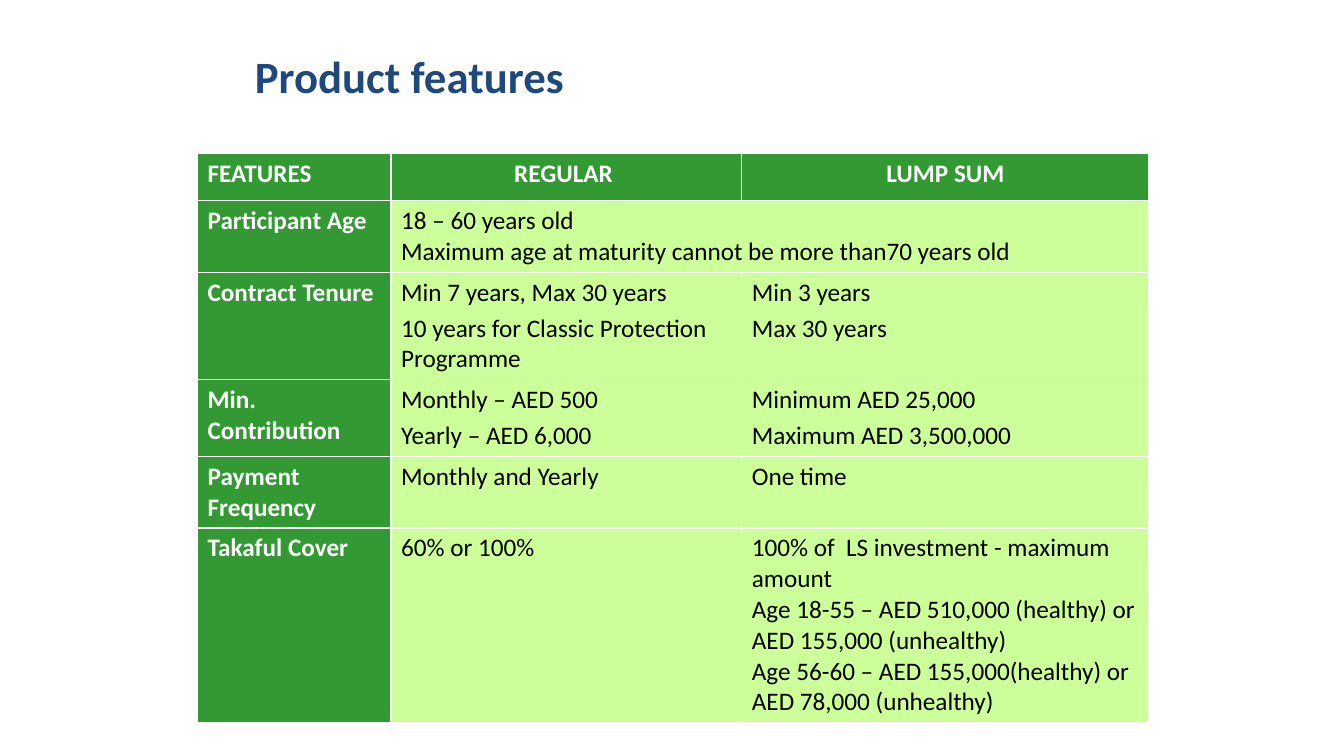
"""Build the product features slide with its comparison table."""
from pptx import Presentation
from pptx import util as u
from pptx.dml.color import RGBColor
from pptx.enum import text

TITLE = "Product features"
HEADINGS = ["FEATURES", "REGULAR ", "LUMP SUM"]
AGE_LIMITS = "18 – 60 years old \nMaximum age at maturity cannot be more than70 years old"
FEATURES = [
    ("Participant Age", [AGE_LIMITS]),
    ("Contract Tenure",
     ["Min 7 years, Max 30 years", "10 years for Classic Protection Programme"],
     ["Min 3 years", "Max 30 years"]),
    ("Min. Contribution",
     ["Monthly – AED 500", "Yearly – AED 6,000"],
     ["Minimum AED 25,000", "Maximum AED 3,500,000"]),
    ("Payment Frequency", ["Monthly and Yearly"], ["One time"]),
    ("Takaful Cover",
     ["60% or 100%"],
     ["100% of  LS investment - maximum amount",
      "Age 18-55 – AED 510,000 (healthy) or AED 155,000 (unhealthy)",
      "Age 56-60 – AED 155,000(healthy) or AED 78,000 (unhealthy)"]),
]
COLUMN_WIDTHS = [138.24, 250.56, 290.88]
ROW_HEIGHTS = [33.84, 49.68, 54, 54, 35.28, 113.04]
TABLE_BOX = (141.12, 109.44, 679.68, 402.48)
TITLE_BOX = (174.96, 28.8, 558.72, 49.68)

THEME = {
    "font": "Calibri", "title_size": 32, "body_size": 18, "gap": 3.6,
    "title": "1F497D", "label": "FFFFFF", "body": "000000",
    "label_fill": "339933", "body_fill": "CCFF99",
}


def add_run(paragraph, wording, size, color, bold):
    run = paragraph.add_run()
    run.text = wording
    run.font.name = THEME["font"]
    run.font.size = u.Pt(THEME[size])
    run.font.color.rgb = RGBColor.from_string(THEME[color])
    run.font.bold = bold


def fill_cell(cell, entries, role, align=text.PP_ALIGN.LEFT, gap=0):
    cell.fill.solid()
    cell.fill.fore_color.rgb = RGBColor.from_string(THEME[role + "_fill"])
    frame = cell.text_frame
    for index, entry in enumerate(entries):
        paragraph = frame.add_paragraph() if index else frame.paragraphs[0]
        paragraph.alignment = align
        paragraph.space_before = u.Pt(gap if index else 0)
        for part, wording in enumerate(entry.split("\n")):
            if part:
                paragraph.add_line_break()
            add_run(paragraph, wording, "body_size", role, role == "label")


def add_title(slide):
    frame = slide.shapes.add_textbox(*map(u.Pt, TITLE_BOX)).text_frame
    frame.word_wrap = True
    frame.vertical_anchor = text.MSO_ANCHOR.MIDDLE
    add_run(frame.paragraphs[0], TITLE, "title_size", "title", True)


def add_features(slide):
    holder = slide.shapes.add_table(
        len(ROW_HEIGHTS), len(COLUMN_WIDTHS), *map(u.Pt, TABLE_BOX))
    table = holder.table
    table.horz_banding = False
    for column, width in zip(table.columns, COLUMN_WIDTHS):
        column.width = u.Pt(width)
    for row, height in zip(table.rows, ROW_HEIGHTS):
        row.height = u.Pt(height)
    holder.height = u.Pt(TABLE_BOX[3])

    for col, heading in enumerate(HEADINGS):
        align = text.PP_ALIGN.CENTER if col else text.PP_ALIGN.LEFT
        fill_cell(table.cell(0, col), [heading], "label", align)
    for row, (feature, *plans) in enumerate(FEATURES, 1):
        fill_cell(table.cell(row, 0), [feature], "label")
        if len(plans) == 1:
            table.cell(row, 1).merge(table.cell(row, 2))
        for col, entries in enumerate(plans, 1):
            gap = THEME["gap"] if len(entries) < 3 else 0
            fill_cell(table.cell(row, col), entries, "body", gap=gap)


def main():
    deck = Presentation()
    deck.slide_width, deck.slide_height = u.Pt(960), u.Pt(540)
    slide = deck.slides.add_slide(deck.slide_layouts[6])
    add_features(slide)
    add_title(slide)
    deck.save("out.pptx")


if __name__ == "__main__":
    main()
